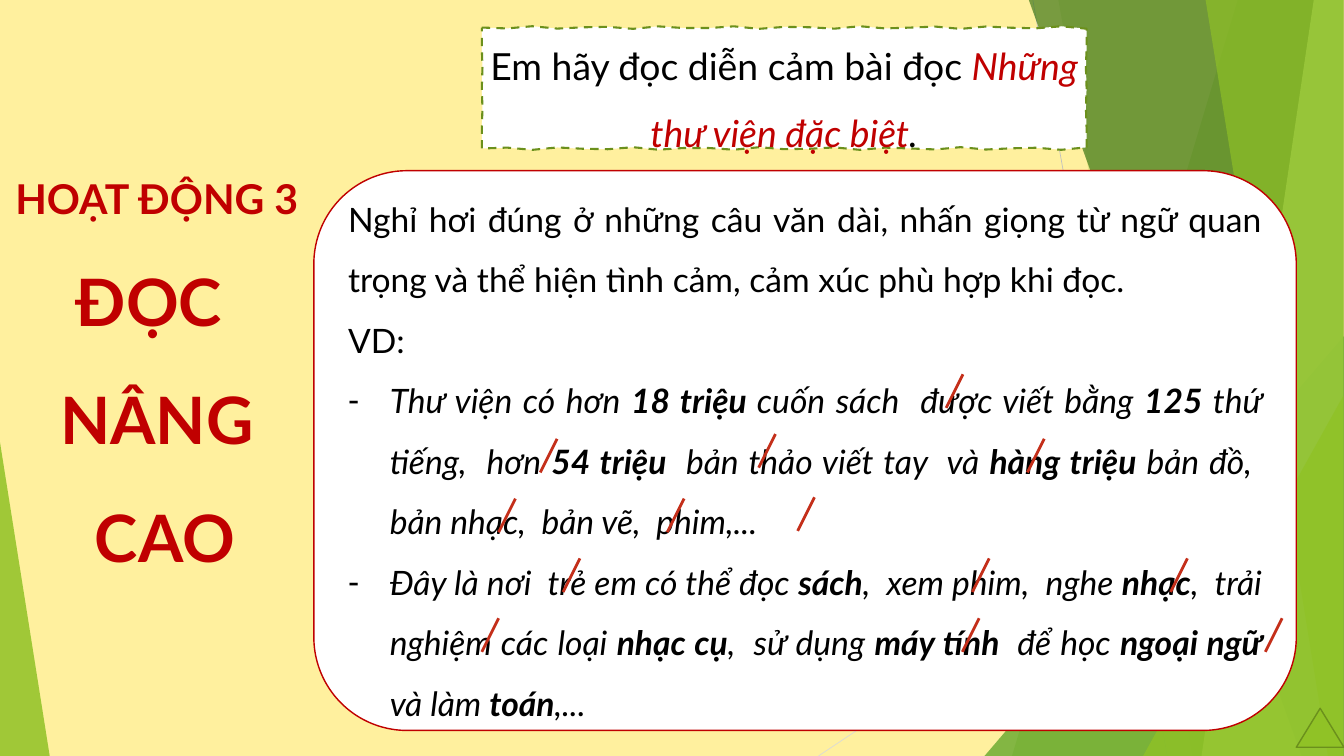
import dataclasses
import math

import lxml.etree
import pptx
import pptx.dml.color
import pptx.enum.shapes
import pptx.enum.text
import pptx.oxml.ns
import pptx.util

Inches = pptx.util.Inches
Align = pptx.enum.text.PP_ALIGN
Anchor = pptx.enum.text.MSO_ANCHOR
Preset = pptx.enum.shapes.MSO_SHAPE


@dataclasses.dataclass(frozen=True)
class Theme:
    font: str = "Lato"
    background: str = "FFF09E"
    paper: str = "FFFFFF"
    text: str = "000000"
    accent: str = "C00000"
    slash: str = "C42F1A"
    green: str = "90C226"
    leaf: str = "54A021"
    forest: str = "3F7819"
    lime: str = "C0E474"
    outline: str = "6B901C"
    grey: str = "BFBFBF"
    light_grey: str = "D9D9D9"
    activity_size: int = 44
    title_size: int = 70
    task_size: int = 40
    body_size: int = 36


THEME = Theme()

FACETS = [  # top left, top right, bottom right, bottom left, colour, opacity
    (18.42, 19.99, 19.99, 15.06, THEME.green, 30),
    (15.75, 20, 20, 17.74, THEME.green, 20),
    (15.31, 19.99, 19.99, 19.37, THEME.forest, 70),
    (19.55, 19.99, 19.99, 17.88, THEME.lime, 70),
    (17.94, 19.99, 19.99, 19.76, THEME.green, 65),
]
INTRODUCTION = [
    "Nghỉ hơi đúng ở những câu văn dài, nhấn giọng từ ngữ quan trọng "
    "và thể hiện tình cảm, cảm xúc phù hợp khi đọc. ",
    "VD:",
]
EXAMPLES = [  # every second piece is stressed
    ["Thư viện có hơn ", "18 triệu ", "cuốn sách  được viết bằng ", "125",
     " thứ tiếng,  hơn ", "54 triệu ", " bản thảo viết tay  và ", "hàng triệu",
     " bản đồ,  bản nhạc,  bản vẽ,  phim,... "],
    ["Đây là nơi  trẻ em có thể đọc ", "sách", ",  xem phim,  nghe ", "nhạc",
     ",  trải nghiệm các loại ", "nhạc cụ", ",  sử dụng ", "máy tính ",
     " để học ", "ngoại ngữ ", "và làm ", "toán", ",..."],
]
PAUSES = {  # top of the slash: right ends along that line
    5.57: [14.33],
    6.46: [11.54],
    6.53: [8.29, 15.54],
    7.4: [12.12],
    7.42: [7.67, 10.18],
    8.31: [8.63, 14.72, 17.67],
    9.2: [7.42, 14.57, 19.08],
}


def rgb(color):
    return pptx.dml.color.RGBColor.from_string(color)


def add_run(paragraph, text, *, size, color=THEME.text, bold=False, italic=False):
    run = paragraph.add_run()
    run.text = text
    font = run.font
    font.name = THEME.font
    font.size = pptx.util.Pt(size)
    font.color.rgb = rgb(color)
    font.bold = bold
    font.italic = italic


def wavy_outline(left, top, width, height, steps=24, amplitude=0.02):
    """Return the corner-to-corner points of a box with slightly uneven edges."""
    right, bottom = left + width, top + height
    wave = [amplitude * math.sin(2.4 * step) for step in range(steps + 1)]
    edge = [(left + width * step / steps, wave[step]) for step in range(steps + 1)]
    upper = [(x, top + offset) for x, offset in edge]
    lower = [(x, bottom - offset) for x, offset in reversed(edge)]
    sides = [top + height * part / 6 for part in range(1, 6)]
    right_side = [(right - 0.01 * (part % 2), y) for part, y in enumerate(sides)]
    left_side = [(left + 0.01 * (part % 2), y) for part, y in enumerate(reversed(sides))]
    return upper + right_side + lower + left_side


class SlideBuilder:
    def __init__(self, presentation, theme):
        self.theme = theme
        self.slide = presentation.slides.add_slide(presentation.slide_layouts[1])
        background = self.slide.background.fill
        background.solid()
        background.fore_color.rgb = rgb(theme.background)

    def style(self, shape, fill, opacity=100, line=None, width=1.5, dash=None):
        shape.shadow.inherit = False
        shape.fill.solid()
        shape.fill.fore_color.rgb = rgb(fill)
        if opacity < 100:
            color = shape.fill._xPr.find(".//" + pptx.oxml.ns.qn("a:srgbClr"))
            alpha = lxml.etree.SubElement(color, pptx.oxml.ns.qn("a:alpha"))
            alpha.set("val", str(opacity * 1000))
        if line:
            shape.line.color.rgb = rgb(line)
            shape.line.width = pptx.util.Pt(width)
            shape.line.dash_style = dash
        else:
            shape.line.fill.background()
        return shape

    def add_preset(self, preset, left, top, width, height, fill, apex=None, **style):
        shape = self.slide.shapes.add_shape(
            preset, Inches(left), Inches(top), Inches(width), Inches(height))
        if apex is not None:
            shape.adjustments[0] = apex
        return self.style(shape, fill, **style)

    def add_polygon(self, points, fill, **style):
        corners = [(Inches(x), Inches(y)) for x, y in points]
        builder = self.slide.shapes.build_freeform(*corners[0])
        builder.add_line_segments(corners[1:], close=True)
        return self.style(builder.convert_to_shape(), fill, **style)

    def add_line(self, start, end, color, width):
        line = self.slide.shapes.add_connector(
            pptx.enum.shapes.MSO_CONNECTOR.STRAIGHT,
            *[Inches(value) for value in (*start, *end)])
        line.line.color.rgb = rgb(color)
        line.line.width = pptx.util.Pt(width)
        lxml.etree.SubElement(line._element.spPr, pptx.oxml.ns.qn("a:effectLst"))

    def place_placeholder(self, index, left, top, width, height, anchor):
        """Move a placeholder above everything drawn so far and return its frame."""
        shape = self.slide.placeholders[index]
        shape.left, shape.top = Inches(left), Inches(top)
        shape.width, shape.height = Inches(width), Inches(height)
        shape._element.getparent().append(shape._element)
        return self.prepare_frame(shape.text_frame, anchor, 0)

    def prepare_frame(self, frame, anchor, inset):
        frame.word_wrap = True
        frame.auto_size = pptx.enum.text.MSO_AUTO_SIZE.NONE
        frame.vertical_anchor = anchor
        frame.margin_left = frame.margin_right = Inches(inset)
        frame.margin_top = frame.margin_bottom = Inches(inset / 2)
        return frame

    def add_paragraph(self, frame, alignment, bullet=None):
        first = frame.paragraphs[0]
        paragraph = first if not first.runs else frame.add_paragraph()
        properties = paragraph._p.get_or_add_pPr()
        indent = Inches(0.62) if bullet else 0
        properties.set("marL", str(indent))
        properties.set("indent", str(-indent))
        tag = "a:buChar" if bullet else "a:buNone"
        mark = lxml.etree.SubElement(properties, pptx.oxml.ns.qn(tag))
        if bullet:
            mark.set("char", bullet)
        paragraph.alignment = alignment
        paragraph.line_spacing = 1.5
        paragraph.space_before = pptx.util.Pt(0)
        return paragraph


def draw_backdrop(builder):
    theme = builder.theme
    builder.add_line((15.37, 0), (17.37, 11.25), theme.grey, 0.75)
    builder.add_line((19.99, 6.04), (12.18, 11.25), theme.light_grey, 0.75)
    for number, (*xs, color, opacity) in enumerate(FACETS):
        if number == 2:
            builder.add_preset(Preset.ISOSCELES_TRIANGLE, 14.65, 5, 5.35, 6.25,
                               theme.leaf, apex=1, opacity=72)
        builder.add_polygon(zip(xs, (0, 0, 11.25, 11.25)), color, opacity=opacity)
    builder.add_preset(Preset.ISOSCELES_TRIANGLE, 17.01, 5.89, 2.98, 5.36,
                       theme.green, apex=1, opacity=80)
    builder.add_preset(Preset.ISOSCELES_TRIANGLE, 0, 6.58, 0.74, 4.67,
                       theme.green, apex=0, opacity=85)


def draw_content(builder):
    theme = builder.theme
    title = builder.place_placeholder(0, 0.17, 2.21, 4.33, 6.41, Anchor.TOP)
    for text in ("HOẠT ĐỘNG 3", "ĐỌC ", "NÂNG", " CAO"):
        size = theme.activity_size if text.startswith("HOẠT") else theme.title_size
        add_run(builder.add_paragraph(title, Align.CENTER), text,
                size=size, color=theme.accent, bold=True)

    task_box = builder.add_polygon(
        wavy_outline(7.17, 0.41, 9, 1.8), theme.paper, line=theme.outline,
        width=2.25, dash=pptx.enum.dml.MSO_LINE.DASH)
    frame = builder.prepare_frame(task_box.text_frame, Anchor.MIDDLE, 0.1)
    task = builder.add_paragraph(frame, Align.CENTER)
    add_run(task, "Em hãy đọc diễn cảm bài đọc ", size=theme.task_size)
    add_run(task, "Những thư viện đặc biệt", size=theme.task_size,
            color=theme.accent, italic=True)
    add_run(task, ".", size=theme.task_size, italic=True)

    builder.add_preset(Preset.ROUNDED_RECTANGLE, 4.67, 2.54, 14.62, 8.33,
                       theme.paper, line=theme.accent)
    body = builder.place_placeholder(1, 5.18, 2.54, 13.6, 8.33, Anchor.MIDDLE)
    for text in INTRODUCTION:
        add_run(builder.add_paragraph(body, Align.JUSTIFY), text, size=theme.body_size)
    for pieces in EXAMPLES:
        paragraph = builder.add_paragraph(body, Align.JUSTIFY, bullet="-")
        for number, piece in enumerate(pieces):
            add_run(paragraph, piece, size=theme.body_size,
                    bold=number % 2 == 1, italic=True)

    for top, right_ends in PAUSES.items():
        for right in right_ends:
            builder.add_line((right, top), (right - 0.25, top + 0.5), theme.slash, 3)
    builder.add_preset(Preset.ISOSCELES_TRIANGLE, 19.29, 10.54, 0.71, 0.58,
                       theme.green, line=theme.outline)


def main():
    presentation = pptx.Presentation()
    presentation.slide_width = Inches(20)
    presentation.slide_height = Inches(11.25)
    builder = SlideBuilder(presentation, THEME)
    draw_backdrop(builder)
    draw_content(builder)
    presentation.save("out.pptx")


if __name__ == "__main__":
    main()
